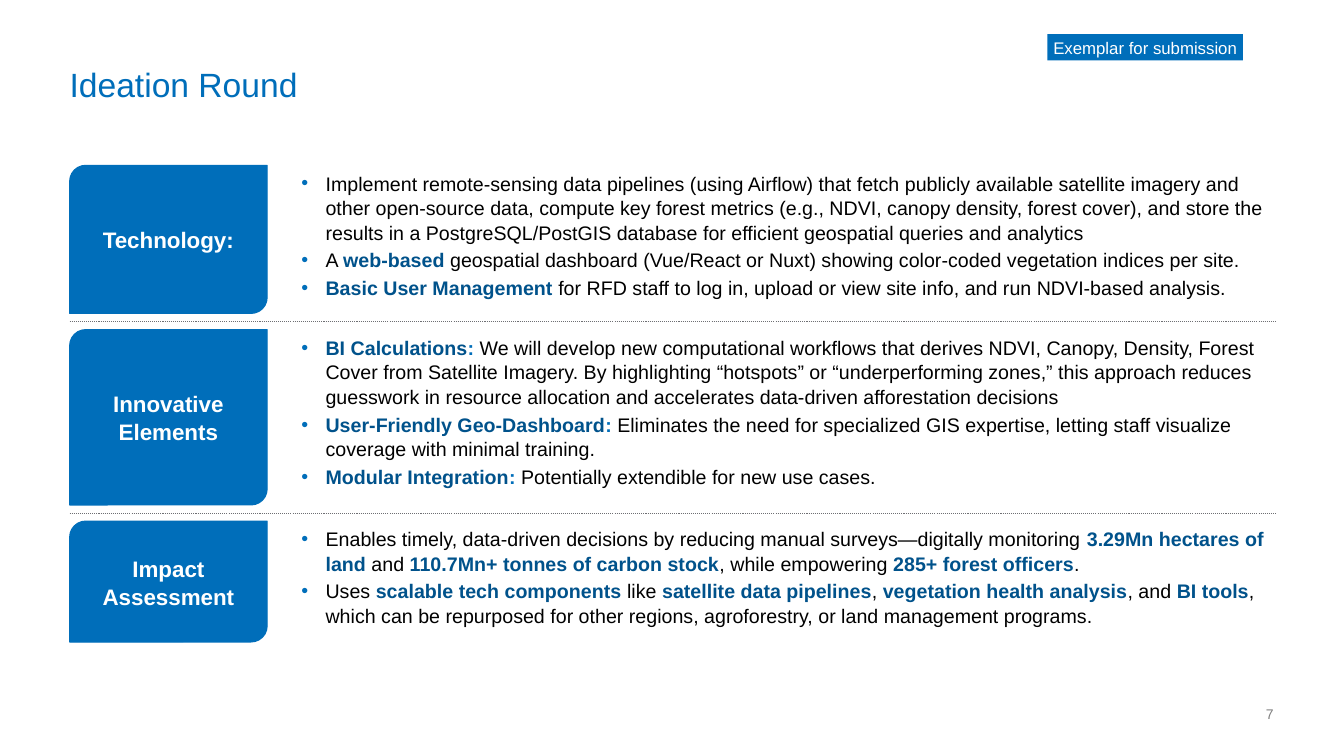
from lxml import etree
from pptx import Presentation
from pptx import util as u
from pptx.dml.color import RGBColor
from pptx.enum import dml, shapes, text
from pptx.oxml import ns

BLUE = RGBColor(0x00, 0x6E, 0xBA)
NAVY = RGBColor(0x00, 0x52, 0x8B)
BLACK = RGBColor(0x00, 0x00, 0x00)
WHITE = RGBColor(0xFF, 0xFF, 0xFF)
LINE_GRAY = RGBColor(0x6E, 0x6F, 0x73)
PAGE_GRAY = RGBColor(0x80, 0x80, 0x80)

# Layout in percent of the slide's width (x) and height (y)
LEFT, CONTENT_WIDTH = 5.18, 89.72
LABEL_WIDTH = 14.7
BODY_LEFT, BODY_WIDTH = 20.86, 74.04
FIRST_ROW, ROW_GAP = 21.87, 2.13

# Runs are split at "|"; "*" opens a highlighted run, "~" a blue bold one
SECTIONS = [
    ("Technology:", 19.6, [
        "Implement remote-sensing data pipelines (using Airflow) that fetch publicly available "
        "satellite imagery and other open-source data, compute key forest metrics (e.g., NDVI, "
        "canopy density, forest cover), and store the results in a PostgreSQL/PostGIS database "
        "for efficient geospatial queries and analytics",
        "A |*web-based| geospatial dashboard (Vue/React or Nuxt) showing color-coded vegetation "
        "indices per site.",
        "*Basic User Management |for RFD staff to log in, upload or view site info, and run "
        "NDVI-based analysis.",
    ]),
    ("Innovative Elements", 23.2, [
        "*BI Calculations|~: |We will develop new computational workflows that derives NDVI, "
        "Canopy, Density, Forest Cover from Satellite Imagery. By highlighting “hotspots” or "
        "“underperforming zones,” this approach reduces guesswork in resource allocation and "
        "accelerates data-driven afforestation decisions",
        "*User-Friendly Geo-Dashboard|~: |Eliminates the need for specialized GIS expertise, "
        "letting staff visualize coverage with minimal training.",
        "*Modular Integration|~: |Potentially extendible for new use cases.",
    ]),
    ("Impact Assessment", 16, [
        "Enables timely, data-driven decisions by reducing manual surveys—digitally monitoring "
        "|*3.29Mn hectares of land |and |*110.7Mn+ tonnes of carbon stock|, while empowering"
        "|* 285+ forest officers|.",
        "Uses |*scalable tech components |like |*satellite data pipelines|, "
        "|*vegetation health analysis|, and |*BI tools|, which can be repurposed for other "
        "regions, agroforestry, or land management programs.",
    ]),
]


class SlideBuilder:
    font_name = "Arial"
    line_spacing = 1.05
    corner_radius = u.Inches(0.16)
    run_colors = {"*": NAVY, "~": BLUE}

    def __init__(self, presentation):
        self.width = presentation.slide_width
        self.height = presentation.slide_height
        self.slide = presentation.slides.add_slide(presentation.slide_layouts[6])

    def box(self, x, y, width, height):
        return (round(x * self.width / 100), round(y * self.height / 100),
                round(width * self.width / 100), round(height * self.height / 100))

    def style(self, font, size, color, bold=False):
        font.name, font.size, font.bold = self.font_name, u.Pt(size), bold
        font.color.rgb = color

    def set_words(self, shape, words, size, color, align, bold=False, spacing=None,
                  anchor=text.MSO_ANCHOR.MIDDLE, flush=True):
        frame = shape.text_frame
        frame.text = words
        frame.word_wrap = True
        frame.vertical_anchor = anchor
        if flush:
            frame.margin_left = frame.margin_right = 0
            frame.margin_top = frame.margin_bottom = 0
        paragraph = frame.paragraphs[0]
        paragraph.alignment = align
        paragraph.line_spacing = spacing
        self.style(paragraph.runs[0].font, size, color, bold)

    def text_line(self, box, words, size, color, align, **options):
        shape = self.slide.shapes.add_textbox(*self.box(*box))
        self.set_words(shape, words, size, color, align, **options)

    def filled(self, kind, box):
        shape = self.slide.shapes.add_shape(kind, *self.box(*box))
        shape.shadow.inherit = False
        shape.fill.solid()
        shape.fill.fore_color.rgb = BLUE
        return shape

    def tag(self, box, words):
        shape = self.filled(shapes.MSO_SHAPE.RECTANGLE, box)
        shape.line.fill.background()
        self.set_words(shape, words, 12, WHITE, text.PP_ALIGN.CENTER)

    def label(self, box, words):
        shape = self.filled(shapes.MSO_SHAPE.ROUND_2_DIAG_RECTANGLE, box)
        shape.line.color.rgb = BLUE
        shape.line.width = u.Pt(0.75)
        shape.adjustments[0] = self.corner_radius / min(shape.width, shape.height)
        shape.adjustments[1] = 0
        self.set_words(shape, words, 16, WHITE, text.PP_ALIGN.CENTER, bold=True,
                       spacing=self.line_spacing, flush=False)

    def divider(self, x, y, width):
        left, top, length, _ = self.box(x, y, width, 0)
        line = self.slide.shapes.add_connector(
            shapes.MSO_CONNECTOR.STRAIGHT, left, top, left + length, top)
        line.line.color.rgb = LINE_GRAY
        line.line.width = u.Pt(0.75)
        line.line.dash_style = dml.MSO_LINE.ROUND_DOT
        etree.SubElement(line._element.spPr, ns.qn("a:effectLst"))

    def add_bullet(self, paragraph):
        properties = paragraph._p.get_or_add_pPr()
        properties.set("marL", str(u.Inches(0.35)))
        properties.set("indent", str(u.Inches(-0.24)))
        color = etree.SubElement(properties, ns.qn("a:buClr"))
        etree.SubElement(color, ns.qn("a:srgbClr"), val=str(BLUE))
        etree.SubElement(properties, ns.qn("a:buFont"), typeface=self.font_name)
        etree.SubElement(properties, ns.qn("a:buChar"), char="•")

    def bullets(self, box, items):
        frame = self.slide.shapes.add_textbox(*self.box(*box)).text_frame
        frame.word_wrap = True
        for index, item in enumerate(items):
            paragraph = frame.add_paragraph() if index else frame.paragraphs[0]
            self.add_bullet(paragraph)
            paragraph.line_spacing = self.line_spacing
            paragraph.space_before = u.Pt(1 if index else 0)
            paragraph.space_after = u.Pt(1)
            for part in item.split("|"):
                color = self.run_colors.get(part[0])
                run = paragraph.add_run()
                run.text = part[1:] if color else part
                self.style(run.font, 14, color or BLACK, bold=color is not None)


def main():
    presentation = Presentation()
    presentation.slide_width = u.Inches(13.33)
    presentation.slide_height = u.Inches(7.5)
    builder = SlideBuilder(presentation)

    # Title, tag and page number
    builder.text_line((LEFT, 9.07, CONTENT_WIDTH, 4.8), "Ideation Round", 24, BLUE,
                      text.PP_ALIGN.LEFT, spacing=0.9, anchor=text.MSO_ANCHOR.TOP)
    builder.tag((77.94, 4.53, 14.55, 3.47), "Exemplar for submission")
    builder.text_line((91.6, 93.33, 3.15, 2.27), "7", 10, PAGE_GRAY,
                      text.PP_ALIGN.RIGHT, anchor=text.MSO_ANCHOR.BOTTOM)

    # Sections with a divider halfway between rows
    top = FIRST_ROW
    for index, (heading, height, items) in enumerate(SECTIONS):
        if index:
            builder.divider(LEFT, top - ROW_GAP / 2, CONTENT_WIDTH)
        builder.label((LEFT, top, LABEL_WIDTH, height), heading)
        builder.bullets((BODY_LEFT, top, BODY_WIDTH, height), items)
        top += height + ROW_GAP

    presentation.save("out.pptx")


if __name__ == "__main__":
    main()
